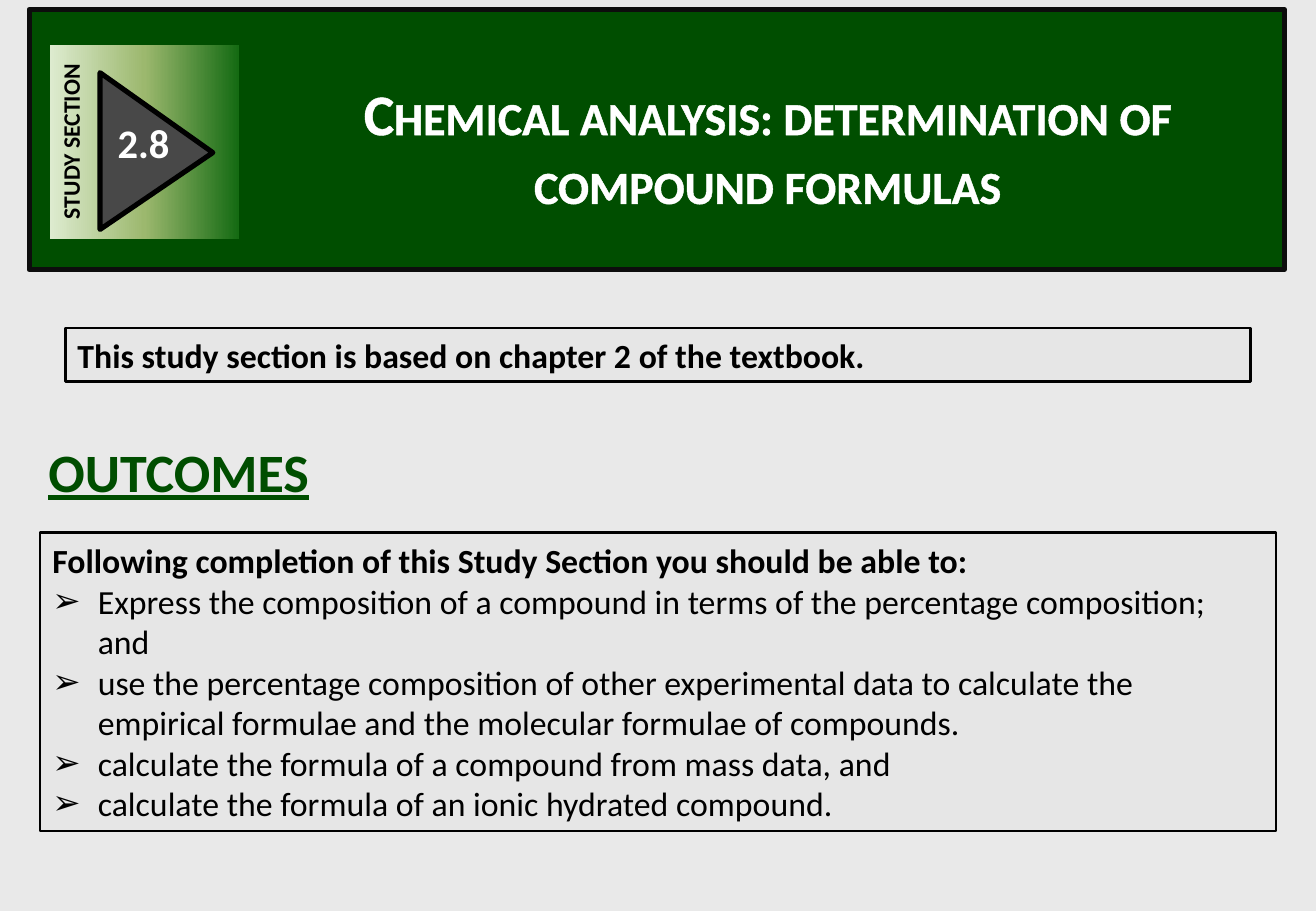
from copy import deepcopy
from dataclasses import dataclass

from lxml.etree import SubElement
from pptx import Presentation
from pptx.dml.color import RGBColor
from pptx.enum.shapes import MSO_SHAPE
from pptx.enum.text import MSO_ANCHOR, MSO_AUTO_SIZE, PP_ALIGN
from pptx.oxml.ns import qn
from pptx.util import Cm, Pt


@dataclass(frozen=True)
class Theme:
    font: str = "Calibri"
    page: str = "E9E9E9"
    panel: str = "E6E6E6"
    green: str = "004E00"
    black: str = "000000"
    edge: str = "0D0D0D"
    white: str = "FFFFFF"
    grey: str = "484848"
    badge: tuple = ((0, "DDEBCF"), (0.5, "9CB86E"), (1, "156B13"))
    title: int = 34
    heading: int = 32
    number: int = 24
    body: int = 20
    label: int = 14


T = Theme()


def place(sp, left, top, width, height, fill=None, line=None, weight=1.5,
          anchor=MSO_ANCHOR.TOP, wrap=True):
    """Position a shape (in cm) and set its fill, outline and text frame."""
    sp.left, sp.top, sp.width, sp.height = map(Cm, (left, top, width, height))
    if fill:
        sp.fill.solid()
        sp.fill.fore_color.rgb = RGBColor.from_string(fill)
    if line:
        sp.line.color.rgb = RGBColor.from_string(line)
        sp.line.width = Pt(weight)
    else:
        sp.line.fill.background()
    sp.shadow.inherit = False
    tf = sp.text_frame
    tf.auto_size = MSO_AUTO_SIZE.NONE
    tf.word_wrap = wrap
    tf.vertical_anchor = anchor
    return sp


def write(sp, text, size, color=T.black, bold=True, align=PP_ALIGN.LEFT,
          underline=None, small_caps=False, outline=None, bullet=None):
    """Add a paragraph; outline is (colour, points), bullet a character."""
    tf = sp.text_frame
    p = tf.paragraphs[0] if not tf.text else tf.add_paragraph()
    p.alignment = align
    p.space_before = Pt(0)
    pPr = p._p.get_or_add_pPr()
    indent = Cm(0.95) if bullet else 0
    pPr.set("marL", str(indent))
    pPr.set("indent", str(-indent))
    if bullet:
        SubElement(pPr, qn("a:buChar"), char=bullet)
    else:
        SubElement(pPr, qn("a:buNone"))
    r = p.add_run()
    r.text = text
    r.font.name = T.font
    r.font.size = Pt(size)
    r.font.bold = bold
    r.font.underline = underline
    r.font.color.rgb = RGBColor.from_string(color)
    rPr = r._r.get_or_add_rPr()
    if small_caps:
        rPr.set("cap", "small")
    if outline:
        ln = SubElement(rPr, qn("a:ln"), w=str(Pt(outline[1])))
        solid = SubElement(ln, qn("a:solidFill"))
        SubElement(solid, qn("a:srgbClr"), val=outline[0])
        rPr.insert(0, ln)


prs = Presentation()
prs.slide_width, prs.slide_height = Cm(27.51), Cm(19.05)
slide = prs.slides.add_slide(prs.slide_layouts[1])
slide.background.fill.solid()
slide.background.fill.fore_color.rgb = RGBColor.from_string(T.page)
shapes = slide.shapes
title, outcomes = slide.placeholders

# Banner with the title on top of it
banner = shapes.add_shape(MSO_SHAPE.RECTANGLE, 0, 0, 0, 0)
place(banner, 0.61, 0.2, 26.24, 5.44, fill=T.green, line=T.edge, weight=3)
place(title, 5.79, 1.5, 20.52, 3.18)
write(title, "Chemical analysis: determination of compound formulas", T.title,
      color=T.white, align=PP_ALIGN.CENTER, small_caps=True,
      outline=(T.white, 0.75))
banner.element.addnext(title.element)

# Section badge
badge = shapes.add_shape(MSO_SHAPE.RECTANGLE, 0, 0, 0, 0)
place(badge, 0.99, 0.99, 4.06, 3.94)
badge.rotation = 270
badge.fill.gradient()
badge.fill.gradient_angle = 270
first_stop = badge.element.find(".//" + qn("a:gs"))
first_stop.addnext(deepcopy(first_stop))
for stop, (position, color) in zip(badge.fill.gradient_stops, T.badge):
    stop.position = position
    stop.color.rgb = RGBColor.from_string(color)
write(badge, "STUDY SECTION", T.label, align=PP_ALIGN.CENTER)

arrow = shapes.add_shape(MSO_SHAPE.ISOSCELES_TRIANGLE, 0, 0, 0, 0)
place(arrow, 1.63, 1.98, 3.28, 2.36, fill=T.grey, line=T.black, weight=3)
arrow.rotation = 90
arrow.adjustments[0] = 0.51

number = shapes.add_textbox(0, 0, 0, 0)
place(number, 2.21, 2.34, 1.6, 1.3, wrap=False)
write(number, "2.8", T.number, color=T.white)

# Textbook note
note = shapes.add_shape(MSO_SHAPE.RECTANGLE, 0, 0, 0, 0)
place(note, 1.37, 6.86, 24.77, 1.12, fill=T.panel, line=T.black,
      anchor=MSO_ANCHOR.MIDDLE)
write(note, "This study section is based on chapter 2 of the textbook.", T.body)

# Outcomes
heading = shapes.add_textbox(0, 0, 0, 0)
place(heading, 0.76, 9.04, 7.34, 1.63)
write(heading, "OUTCOMES", T.heading, color=T.green, underline=True,
      outline=(T.black, 0.25))

place(outcomes, 0.84, 11.13, 25.83, 6.25, fill=T.panel, line=T.black,
      anchor=MSO_ANCHOR.MIDDLE)
write(outcomes,
      "Following completion of this Study Section you should be able to:",
      T.body)
for outcome in (
    "Express the composition of a compound in terms of the percentage "
    "composition; and",
    "use the percentage composition of other experimental data to calculate "
    "the empirical formulae and the molecular formulae of compounds.",
    "calculate the formula of a compound from mass data, and",
    "calculate the formula of an ionic hydrated compound.",
):
    write(outcomes, outcome, T.body, bold=False, bullet="➢")

prs.save("out.pptx")
